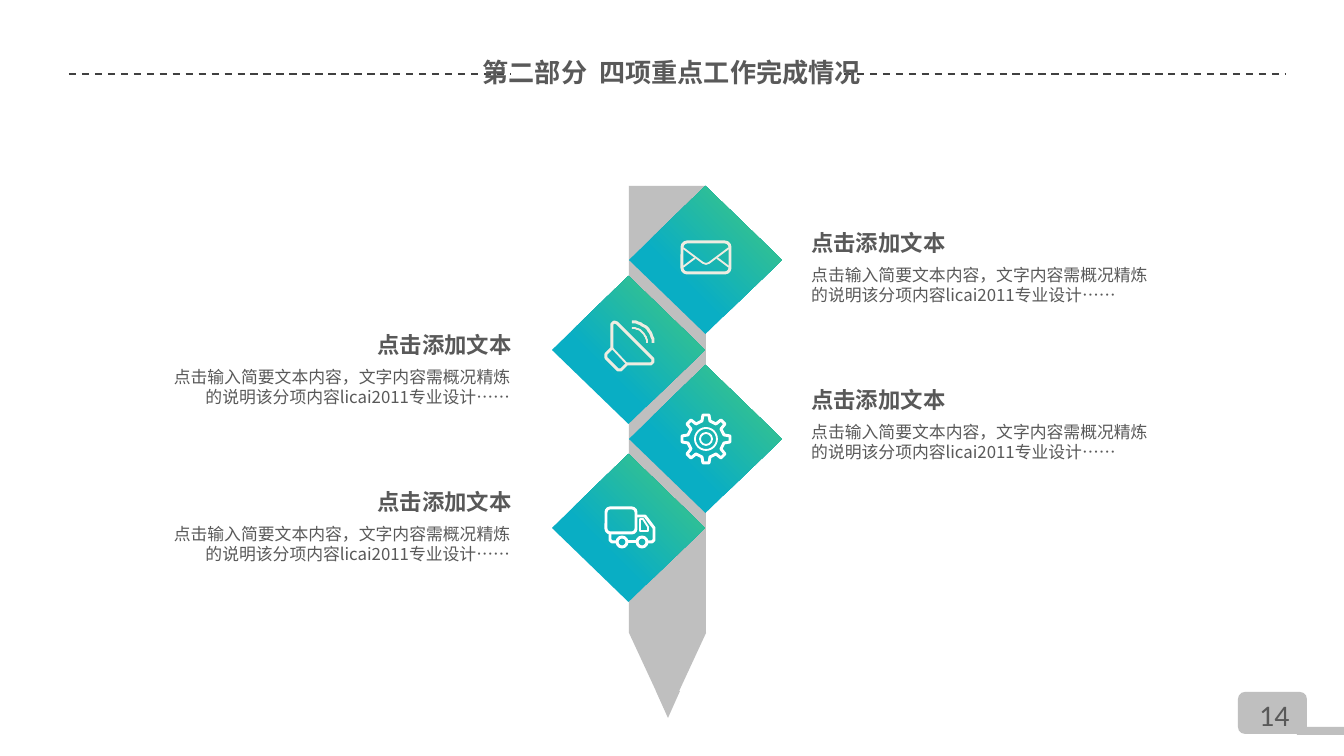
from math import cos, radians, sin

from lxml import etree
from pptx import Presentation
from pptx.dml.color import RGBColor
from pptx.enum.dml import MSO_LINE
from pptx.enum.shapes import MSO_CONNECTOR, MSO_SHAPE
from pptx.enum.text import MSO_ANCHOR, PP_ALIGN
from pptx.oxml.ns import qn
from pptx.util import Pt

PX = 914400 / 134.4
LEFT, CENTER, RIGHT = PP_ALIGN.LEFT, PP_ALIGN.CENTER, PP_ALIGN.RIGHT
TOP, MIDDLE = MSO_ANCHOR.TOP, MSO_ANCHOR.MIDDLE
RECT, ROUND_RECT = MSO_SHAPE.RECTANGLE, MSO_SHAPE.ROUNDED_RECTANGLE
TRIANGLE, DIAMOND, OVAL = MSO_SHAPE.ISOSCELES_TRIANGLE, MSO_SHAPE.DIAMOND, MSO_SHAPE.OVAL
STRAIGHT, DASH = MSO_CONNECTOR.STRAIGHT, MSO_LINE.DASH
CJK, LATIN = "Noto Sans CJK SC", "Calibri"
BOLD_STROKE, FINE_STROKE = 1.6, 1
COLORS = {
    "gray": "BFBFBF", "text": "595959", "rule": "404040",
    "blue": "09AEC4", "green": "45C87C", "white": "FFFFFF", "cream": "EEECE1",
}
HEADING = "点击添加文本"
BODY = "点击输入简要文本内容，文字内容需概况精炼的说明该分项内容licai2011专业设计……"


def px(length):
    """Turn pixels into EMU."""
    return round(length * PX)


def rgb(name):
    """Look up a named colour."""
    return RGBColor.from_string(COLORS[name])


def add_text(slide, text, box, size, font=CJK, bold=False, align=LEFT,
             anchor=TOP, wrap=True, leading=None):
    """Add one formatted paragraph in a text box."""
    frame = slide.shapes.add_textbox(*map(px, box)).text_frame
    frame.word_wrap = wrap
    frame.vertical_anchor = anchor
    paragraph = frame.paragraphs[0]
    paragraph.alignment = align
    if leading:
        paragraph.line_spacing = Pt(leading)
    run = paragraph.add_run()
    run.text = text
    run.font.name = font
    run.font.size = Pt(size)
    run.font.bold = bold
    run.font.color.rgb = rgb("text")
    etree.SubElement(run.font._element, qn("a:ea"), typeface=font)


def add_solid(slide, kind, box, color="gray"):
    """Add a filled shape without an outline."""
    shape = slide.shapes.add_shape(kind, *map(px, box))
    shape.shadow.inherit = False
    shape.fill.solid()
    shape.fill.fore_color.rgb = rgb(color)
    shape.line.fill.background()
    return shape


def add_diamond(slide, left, top):
    """Add a diamond with the blue to green gradient."""
    diamond = add_solid(slide, DIAMOND, (left, top, 153, 148))
    diamond.fill.gradient()
    diamond.fill.gradient_angle = 45
    stops = zip(diamond.fill.gradient_stops, (("blue", 0.35), ("green", 1)))
    for stop, (color, position) in stops:
        stop.color.rgb = rgb(color)
        stop.position = position


def style_stroke(shape, color, weight):
    """Leave only the outline of a shape."""
    shape.shadow.inherit = False
    shape.fill.background()
    shape.line.color.rgb = rgb(color)
    shape.line.width = Pt(weight)


def add_stroke(slide, points, color, weight=BOLD_STROKE, close=False):
    """Draw an outline through points."""
    builder = slide.shapes.build_freeform(*points[0], scale=PX)
    builder.add_line_segments(points[1:], close=close)
    style_stroke(builder.convert_to_shape(), color, weight)


def add_outline(slide, kind, box, color, weight=BOLD_STROKE):
    """Draw a preset shape as an outline."""
    shape = slide.shapes.add_shape(kind, *map(px, box))
    style_stroke(shape, color, weight)


def add_circle(slide, x, y, radius, color, weight=BOLD_STROKE):
    """Draw a circle around a centre."""
    box = (x - radius, y - radius, 2 * radius, 2 * radius)
    add_outline(slide, OVAL, box, color, weight)


def polar(x, y, radius, degrees):
    """Give the point at an angle from a centre."""
    return x + radius * cos(radians(degrees)), y + radius * sin(radians(degrees))


def add_rule(slide, start, end, y):
    """Add a dashed line beside the title."""
    rule = slide.shapes.add_connector(STRAIGHT, px(start), px(y), px(end), px(y))
    rule.line.color.rgb = rgb("rule")
    rule.line.width = Pt(1)
    rule.line.dash_style = DASH
    etree.SubElement(rule._element.spPr, qn("a:effectLst"))


def add_mail(slide):
    """Draw the envelope icon."""
    add_outline(slide, ROUND_RECT, (682, 242, 48, 31), "cream")
    for fold in (
        [(683, 248), (703, 263), (706, 264), (709, 263), (729, 248)],
        [(683, 267), (695, 258)],
        [(729, 267), (717, 258)],
    ):
        add_stroke(slide, fold, "cream", FINE_STROKE)


def add_speaker(slide):
    """Draw the loudspeaker icon."""
    horn = [(612, 324), (614, 322), (617, 323), (653, 359), (653, 362), (651, 364),
            (627, 364), (621, 370), (618, 370), (606, 358), (606, 354), (612, 348)]
    add_stroke(slide, horn, "cream", close=True)
    add_stroke(slide, [(612, 348), (627, 364)], "cream", FINE_STROKE)
    for radius, weight in ((21, BOLD_STROKE), (15, FINE_STROKE)):
        wave = [polar(632, 343, radius, degrees) for degrees in range(-90, 1, 6)]
        add_stroke(slide, wave, "cream", weight)


def add_gear(slide):
    """Draw the gear icon."""
    x, y = 706, 439
    profile = ((-13, 18), (-6, 24), (6, 24), (13, 18))
    teeth = [polar(x, y, radius, tooth + offset)
             for tooth in range(0, 360, 45) for offset, radius in profile]
    add_stroke(slide, teeth, "white", close=True)
    for radius in (11, 6):
        add_circle(slide, x, y, radius, "white", FINE_STROKE)


def add_truck(slide):
    """Draw the truck icon."""
    add_outline(slide, ROUND_RECT, (606, 508, 30, 25), "white")
    for part in (
        [(637, 516), (645, 516), (654, 528), (654, 540), (652, 542), (648, 542)],
        [(610, 533), (610, 540), (612, 542), (616, 542)],
        [(628, 542), (636, 542)],
    ):
        add_stroke(slide, part, "white")
    window = [(640, 519), (640, 531), (648, 531), (648, 527), (643, 519)]
    add_stroke(slide, window, "white", FINE_STROKE, close=True)
    for axle in (622, 642):
        add_circle(slide, axle, 542, 5, "white")


def add_item(slide, top, align):
    """Add a heading and its description on one side."""
    heading_left, body_left = (798, 798) if align == LEFT else (362, 159)
    add_text(slide, HEADING, (heading_left, top, 163, 40), 12, bold=True,
             align=align, wrap=False, leading=14.4)
    add_text(slide, BODY, (body_left, top + 35, 364, 54), 9, align=align, leading=10.8)


def add_frame(slide):
    """Add the title, its rules and the page number."""
    add_solid(slide, ROUND_RECT, (1238, 692, 69, 42))
    add_solid(slide, RECT, (1297, 727, 47, 8))
    add_text(slide, "14", (1246, 690, 64, 50), 16, font=LATIN, wrap=False)
    for start in (69, 844):
        add_rule(slide, start, start + 442, 74)
    add_text(slide, "第二部分  四项重点工作完成情况", (16, 47, 1312, 51), 14,
             bold=True, align=CENTER, anchor=MIDDLE, leading=16.8)


def add_pole(slide):
    """Add the gray pole with its point."""
    add_solid(slide, RECT, (629, 186, 77, 447))
    for box in ((629, 633, 77, 83), (656, 691, 24, 27)):
        add_solid(slide, TRIANGLE, box).rotation = 180


def main():
    """Build the slide and save it."""
    deck = Presentation()
    deck.slide_width, deck.slide_height = px(1344), px(756)
    slide = deck.slides.add_slide(deck.slide_layouts[6])
    add_frame(slide)
    add_pole(slide)
    for row, add_icon in enumerate((add_mail, add_speaker, add_gear, add_truck)):
        add_diamond(slide, 552 if row % 2 else 629, 186 + round(row * 89.5))
        add_icon(slide)
    for top, align in ((325, RIGHT), (482, RIGHT), (223, LEFT), (380, LEFT)):
        add_item(slide, top, align)
    deck.save("out.pptx")


if __name__ == "__main__":
    main()
